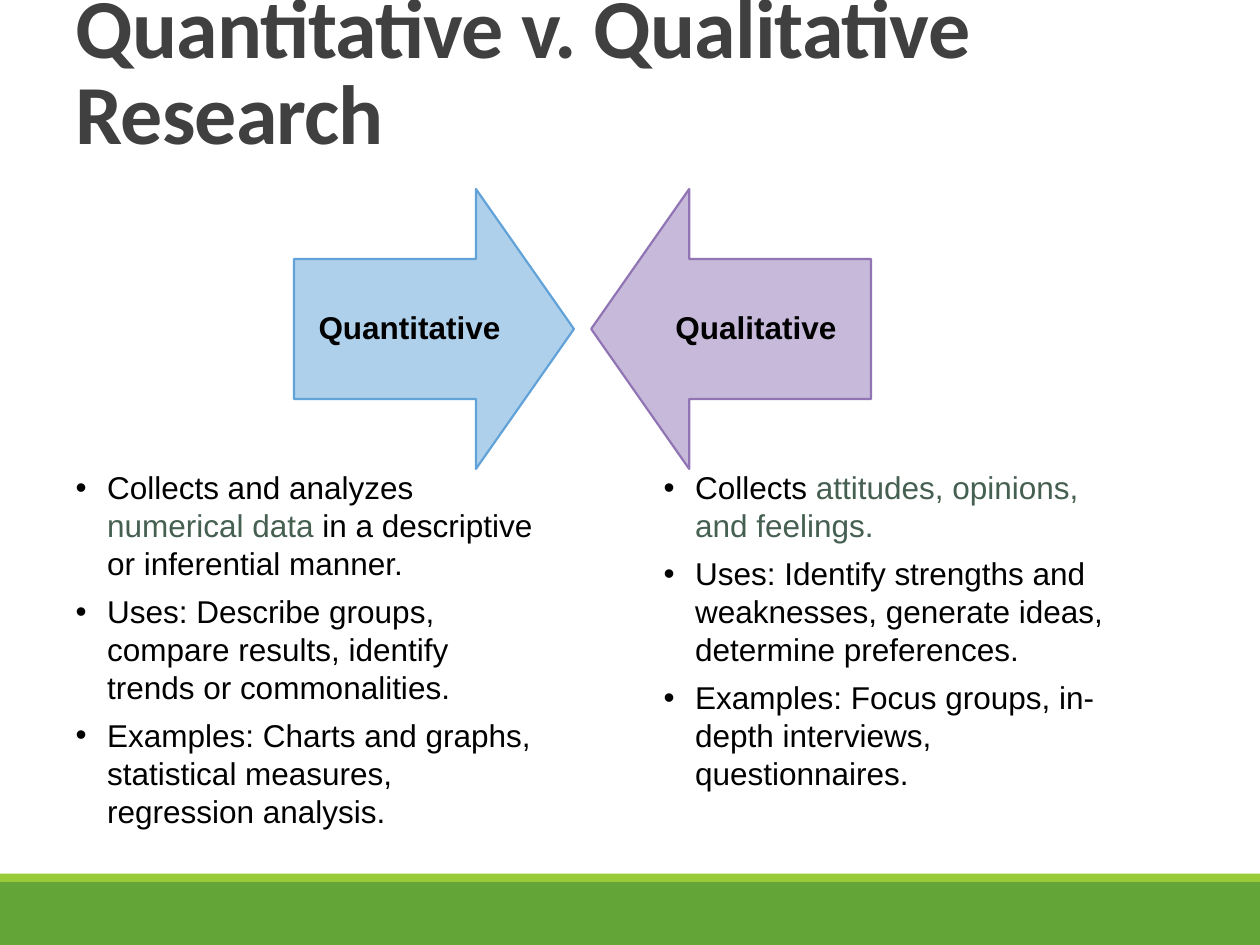
from lxml.etree import SubElement
from pptx import Presentation
from pptx.dml.color import RGBColor
from pptx.enum.shapes import MSO_SHAPE as Shape
from pptx.enum.text import MSO_ANCHOR as Anchor, MSO_AUTO_SIZE as AutoSize, PP_ALIGN as Align
from pptx.oxml.ns import qn
from pptx.util import Inches, Pt

COLUMNS, ROWS = 60, 45
BLACK, ACCENT = "000000", "455F51"


def rgb(hex_code):
    return RGBColor.from_string(hex_code)


def apply_format(target, values):
    for name, value in values.items():
        setattr(target, name, value)


class SlideBuilder:
    title_font = {"name": "Calibri", "size": Pt(48), "bold": True}
    label_font = {"name": "Arial", "size": Pt(18), "bold": True}
    list_font = {"name": "Arial", "size": Pt(18), "bold": False}

    def __init__(self, deck):
        self.cell_width = deck.slide_width / COLUMNS
        self.cell_height = deck.slide_height / ROWS
        self.slide = deck.slides.add_slide(deck.slide_layouts.get_by_name("Two Content"))

    def area(self, column, row, columns, rows):
        return [round(n * cell) for n, cell in zip(
            (column, row, columns, rows), (self.cell_width, self.cell_height) * 2)]

    def place(self, holder, cells):
        apply_format(holder, dict(zip(("left", "top", "width", "height"), self.area(*cells))))

    def add_text(self, paragraph, text, font, color):
        run = paragraph.add_run()
        run.text = text
        apply_format(run.font, font)
        run.font.color.rgb = rgb(color)
        return run

    def shape(self, kind, cells, color):
        shape = self.slide.shapes.add_shape(kind, *self.area(*cells))
        shape.shadow.inherit = False
        shape.fill.solid()
        shape.fill.fore_color.rgb = rgb(color)
        shape.line.fill.background()
        return shape

    def title(self, text, cells, color):
        title = self.slide.shapes.title
        self.place(title, cells)
        apply_format(title.text_frame, {
            "vertical_anchor": Anchor.BOTTOM, "auto_size": AutoSize.NONE, "word_wrap": True})
        paragraph = title.text_frame.paragraphs[0]
        apply_format(paragraph, {"alignment": Align.LEFT, "line_spacing": 0.85})
        run = self.add_text(paragraph, text, self.title_font, color)
        run._r.get_or_add_rPr().set("spc", "-50")

    def arrow(self, cells, rotation, color):
        arrow = self.shape(Shape.DOWN_ARROW, cells, color)
        arrow.rotation = rotation
        arrow.adjustments[0], arrow.adjustments[1] = 0.5, 0.35
        arrow.line.color.rgb = rgb(color)
        arrow.line.width = Pt(1.25)
        # Half-transparent fill
        fill_color = arrow._element.spPr.find(qn("a:solidFill"))[0]
        SubElement(fill_color, qn("a:alpha")).set("val", "50000")

    def label(self, text, cells):
        frame = self.slide.shapes.add_textbox(*self.area(*cells)).text_frame
        margins = dict.fromkeys(
            ("margin_left", "margin_top", "margin_right", "margin_bottom"), Inches(0.14))
        apply_format(frame, {"word_wrap": True, "vertical_anchor": Anchor.MIDDLE, **margins})
        paragraph = frame.paragraphs[0]
        apply_format(paragraph, {"alignment": Align.CENTER, "line_spacing": 0.9})
        self.add_text(paragraph, text, self.label_font, BLACK)

    def bullets(self, index, cells, items):
        body = self.slide.placeholders[index]
        self.place(body, cells)
        frame = body.text_frame
        apply_format(frame, {"auto_size": AutoSize.NONE, "word_wrap": True})
        for number, item in enumerate(items):
            paragraph = frame.add_paragraph() if number else frame.paragraphs[0]
            indent = Inches(0.25)
            properties = paragraph._p.get_or_add_pPr()
            properties.set("marL", str(indent))
            properties.set("indent", str(-indent))
            apply_format(paragraph, {"space_before": Pt(0), "space_after": Pt(6)})
            for text, color in item:
                self.add_text(paragraph, text, self.list_font, color)


def main():
    deck = Presentation()
    deck.slide_width, deck.slide_height = Inches(10), Inches(7.5)
    page = SlideBuilder(deck)

    # Footer bands
    page.shape(Shape.RECTANGLE, (0, 42, COLUMNS, 3), "63A537")
    page.shape(Shape.RECTANGLE, (0, 41.6, COLUMNS, 0.4), "99CB38")

    page.title("Quantitative v. Qualitative Research", (3, 1.87, 57, 6.13), "404040")

    # Facing arrows with their labels
    side = 13.33
    for name, column, label_column, rotation, color in (
            ("Quantitative", 14, 14, 270, "61A2D8"),
            ("Qualitative", 28.15, 30.5, 90, "9074B4")):
        page.arrow((column, 9, side, side), rotation, color)
        page.label(name, (label_column, 9 + side / 4, 11, side / 2))

    # Comparison lists
    page.bullets(1, (3, 22, 23, 17.95), [
        [("Collects and analyzes ", BLACK), ("numerical data ", ACCENT),
         ("in a descriptive or inferential manner.", BLACK)],
        [("Uses: Describe groups, compare results, identify trends or commonalities.", BLACK)],
        [("Examples: Charts and graphs, statistical measures, regression analysis.", BLACK)],
    ])
    page.bullets(2, (31, 22, 23.5, 16.15), [
        [("Collects ", BLACK), ("attitudes, opinions, and feelings.", ACCENT)],
        [("Uses: Identify strengths and weaknesses, generate ideas, determine preferences.",
          BLACK)],
        [("Examples: Focus groups, in-depth interviews, questionnaires.", BLACK)],
    ])

    deck.save("out.pptx")


if __name__ == "__main__":
    main()
